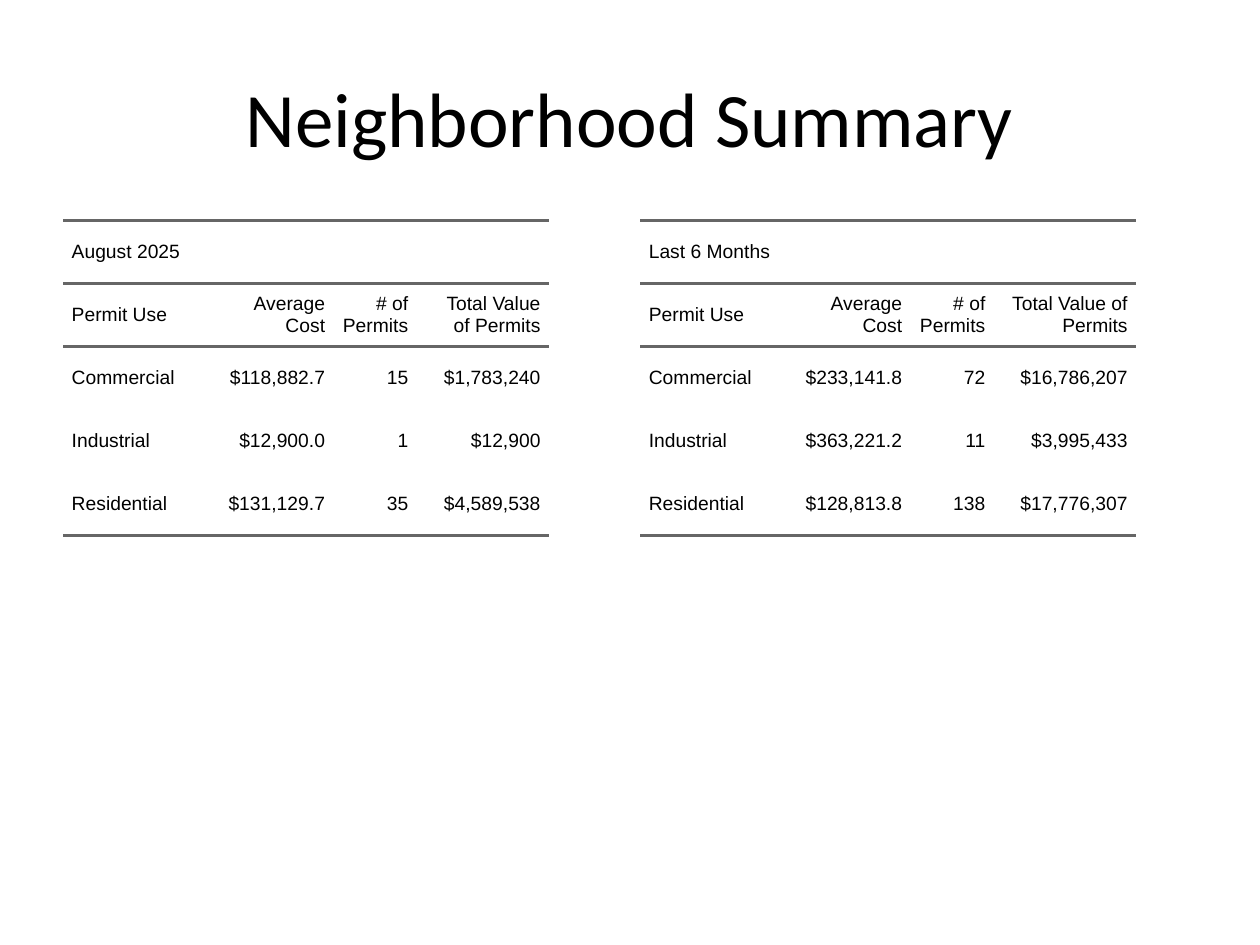
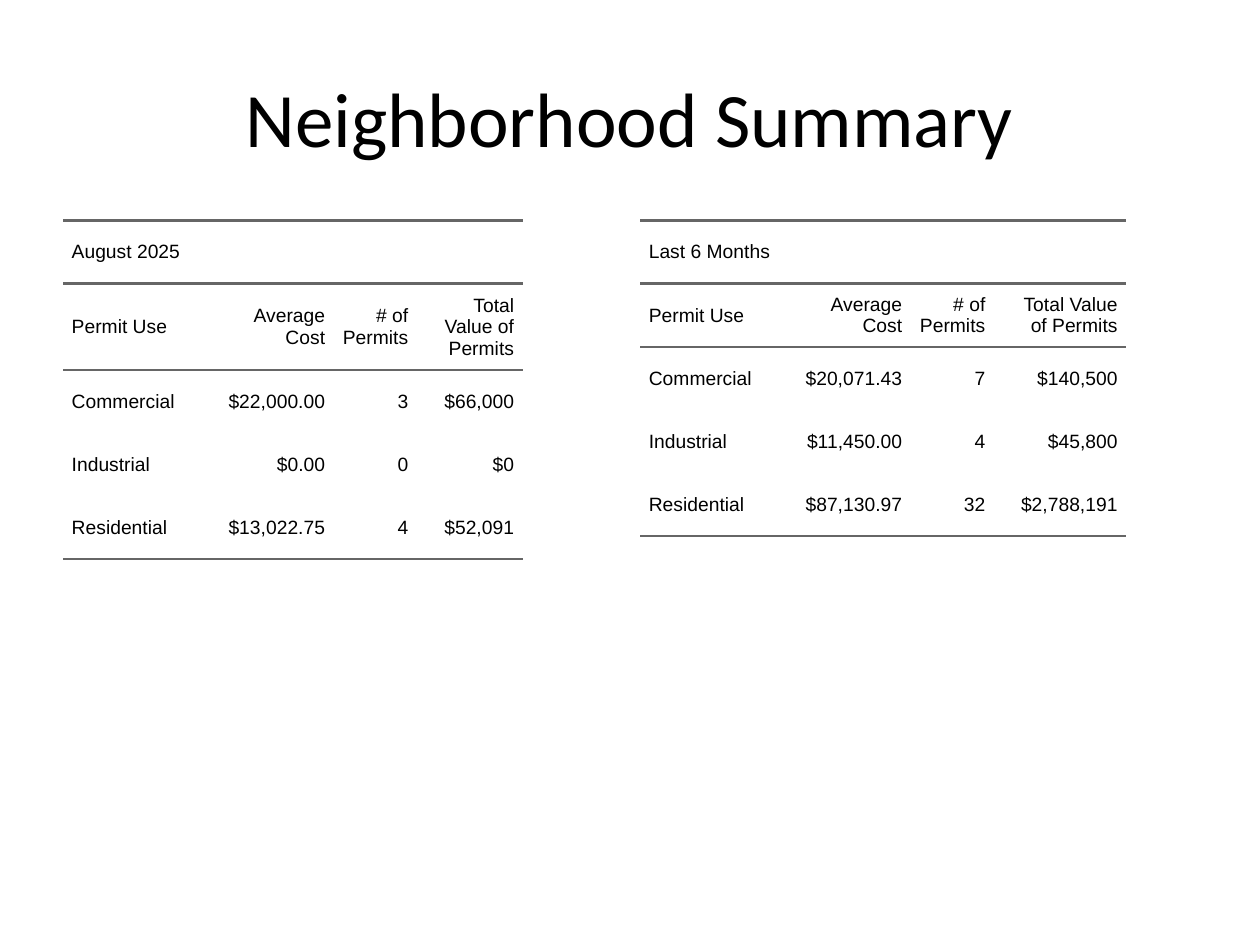
from dataclasses import dataclass

from lxml.etree import SubElement
from pptx import Presentation
from pptx.dml.color import RGBColor
from pptx.enum.text import MSO_ANCHOR, PP_ALIGN
from pptx.oxml.ns import qn
from pptx.slide import Slide
from pptx.table import _Cell
from pptx.text.text import _Paragraph
from pptx.util import Inches, Length, Pt

COLORS = {"text": "000000", "rule": "666666"}
SLIDE_WIDTH, SLIDE_HEIGHT = Inches(10), Inches(7.5)
GRID_ROWS = 30

MARGIN = 0.05
PANEL_WIDTH = 0.442
PANEL_LEFTS = (MARGIN, 1 - MARGIN - PANEL_WIDTH)
LABEL_WIDTHS = (0.11, 0.105, 0.066)
PANEL_TOP, PANEL_ROWS, TABLE_ROW = 7, 19.8, 2

TITLE = "Neighborhood Summary"
HEADINGS = ("Permit Use", "Average Cost", "# of Permits", "Total Value of Permits")
USES = ("Commercial", "Industrial", "Residential")
PADDING = Pt(5)
NO_TABLE_STYLE = "{2D5ABB26-0587-4C30-8999-92F81FD0307C}"


@dataclass(frozen=True)
class PermitTable:
    period: str
    total_width: float
    figures: tuple[tuple[str, str, str], ...]  # one row per permit use


SUMMARIES = (
    (
        PermitTable("August 2025", 0.105, (
            ("$118,882.7", "15", "$1,783,240"),
            ("$12,900.0", "1", "$12,900"),
            ("$131,129.7", "35", "$4,589,538"),
        )),
        PermitTable("Last 6 Months", 0.113, (
            ("$233,141.8", "72", "$16,786,207"),
            ("$363,221.2", "11", "$3,995,433"),
            ("$128,813.8", "138", "$17,776,307"),
        )),
    ),
    (
        PermitTable("August 2025", 0.084, (
            ("$22,000.00", "3", "$66,000"),
            ("$0.00", "0", "$0"),
            ("$13,022.75", "4", "$52,091"),
        )),
        PermitTable("Last 6 Months", 0.105, (
            ("$20,071.43", "7", "$140,500"),
            ("$11,450.00", "4", "$45,800"),
            ("$87,130.97", "32", "$2,788,191"),
        )),
    ),
)


def across(share: float) -> Length:
    """Length of a share of the slide's width."""
    return Length(round(SLIDE_WIDTH * share))


def down(rows: float) -> Length:
    """Length of a number of grid rows."""
    return Length(round(SLIDE_HEIGHT * rows / GRID_ROWS))


def write(paragraph: _Paragraph, text: str, font: str, size: int, alignment: PP_ALIGN) -> None:
    paragraph.text = text
    paragraph.alignment = alignment
    paragraph.font.name = font
    paragraph.font.size = Pt(size)
    paragraph.font.color.rgb = RGBColor.from_string(COLORS["text"])


def add_title(slide: Slide) -> None:
    box = slide.shapes.add_textbox(across(MARGIN), down(1.2), across(1 - 2 * MARGIN), down(5))
    frame = box.text_frame
    frame.word_wrap = True
    frame.vertical_anchor = MSO_ANCHOR.MIDDLE
    write(frame.paragraphs[0], TITLE, "Calibri", 44, PP_ALIGN.CENTER)


def add_rule(cell: _Cell, side: str) -> None:
    """Draw one border of a cell; side is lnT or lnB."""
    line = SubElement(cell._tc.get_or_add_tcPr(), qn(f"a:{side}"), w=str(Pt(1.5)))
    fill = SubElement(line, qn("a:solidFill"))
    SubElement(fill, qn("a:srgbClr"), val=COLORS["rule"])


def format_cell(cell: _Cell, text: str, alignment: PP_ALIGN, sides: tuple[str, ...]) -> None:
    for side in sides:
        add_rule(cell, side)
    cell.fill.background()
    cell.vertical_anchor = MSO_ANCHOR.MIDDLE
    cell.margin_left = cell.margin_right = 0
    cell.margin_top = cell.margin_bottom = PADDING
    paragraph = cell.text_frame.paragraphs[0]
    write(paragraph, text, "Arial", 11, alignment)
    paragraph.space_before = paragraph.space_after = PADDING
    properties = paragraph._p.get_or_add_pPr()
    for name, value in (("marL", PADDING), ("marR", PADDING), ("indent", 0)):
        properties.set(name, str(int(value)))


def add_permit_table(slide: Slide, left: float, content: PermitTable) -> None:
    rows = [(content.period, "", "", ""), HEADINGS]
    rows += [(use, *figures) for use, figures in zip(USES, content.figures)]
    width, height = across(PANEL_WIDTH), down(PANEL_ROWS)
    shape = slide.shapes.add_table(
        len(rows), len(HEADINGS), across(left), down(PANEL_TOP), width, height
    )
    table = shape.table
    table.first_row = table.horz_banding = False
    table._tbl.tblPr.find(qn("a:tableStyleId")).text = NO_TABLE_STYLE
    for column, share in zip(table.columns, (*LABEL_WIDTHS, content.total_width)):
        column.width = across(share)
    for row in table.rows:
        row.height = down(TABLE_ROW)
    shape.width, shape.height = width, height

    table.cell(0, 0).merge(table.cell(0, len(HEADINGS) - 1))
    for row_index, texts in enumerate(rows):
        if row_index < 2:
            sides = ("lnT", "lnB")
        else:
            sides = ("lnB",) if row_index == len(rows) - 1 else ()
        for column_index, text in enumerate(texts):
            alignment = PP_ALIGN.RIGHT if column_index else PP_ALIGN.LEFT
            format_cell(table.cell(row_index, column_index), text, alignment, sides)


def main() -> None:
    presentation = Presentation()
    presentation.slide_width, presentation.slide_height = SLIDE_WIDTH, SLIDE_HEIGHT
    for summary in SUMMARIES:
        slide = presentation.slides.add_slide(presentation.slide_layouts[6])
        for left, content in zip(PANEL_LEFTS, summary):
            add_permit_table(slide, left, content)
        add_title(slide)
    presentation.save("out.pptx")


if __name__ == "__main__":
    main()
